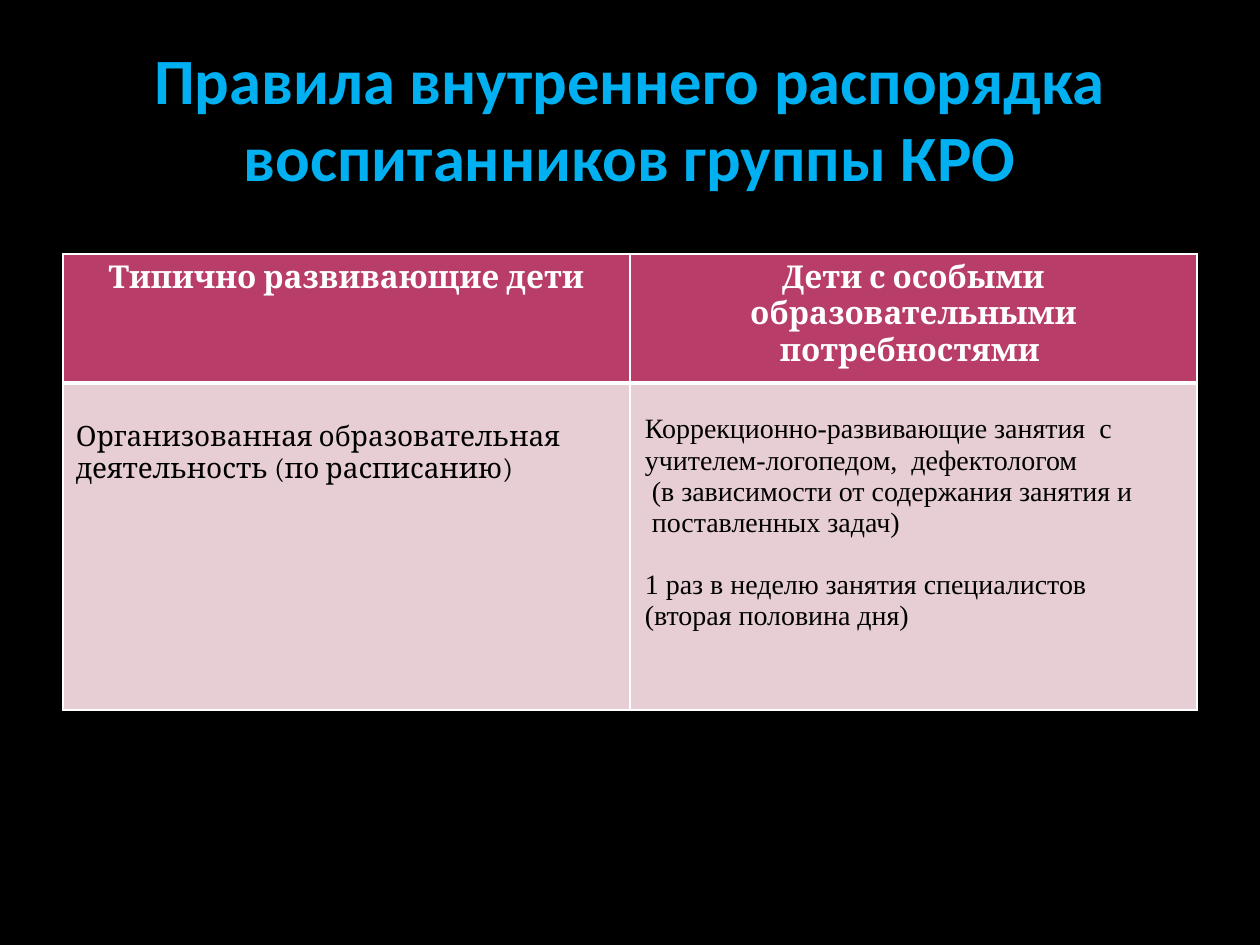
from lxml import etree
from pptx import Presentation
from pptx.dml.color import RGBColor
from pptx.enum import text
from pptx.oxml.ns import qn
from pptx.util import Emu, Pt

PX = 914400 // 126
BLACK = RGBColor(0, 0, 0)
WHITE = RGBColor(255, 255, 255)
BLUE = RGBColor(0, 0xB0, 0xF0)
ROSE = RGBColor(0xB8, 0x3D, 0x68)
PINK = RGBColor(0xE6, 0xCE, 0xD4)

TITLE = "Правила внутреннего распорядка воспитанников группы КРО"
HEADS = ["Типично развивающие дети",
         "Дети с особыми образовательными потребностями "]
LEFT = ["Организованная образовательная деятельность (по расписанию)"]
RIGHT = ["Коррекционно-развивающие занятия  с учителем-логопедом,  дефектологом",
         " (в зависимости от содержания занятия и",
         " поставленных задач)",
         "1 раз в неделю занятия специалистов",
         "(вторая половина дня)"]
GAP = {RIGHT[3]: 31}  # px above a paragraph

HEAD = {"name": "Cambria", "size": Pt(18), "bold": True}
BODY = {"name": "Cambria", "size": Pt(16), "bold": False}
TIMES = {**BODY, "name": "Times New Roman"}
MID = text.PP_ALIGN.CENTER
SIDE = text.PP_ALIGN.LEFT

# lines, font, colour, fill, alignment, margins in px (left, top, right, bottom)
GRID = [
    [([h], HEAD, WHITE, ROSE, MID, (13, 6, 13, 6)) for h in HEADS],
    [(LEFT, BODY, BLACK, PINK, SIDE, (13, 38, 13, 6)),
     (RIGHT, TIMES, BLACK, PINK, SIDE, (15, 31, 15, 0))],
]
COLS = [567, 567]
ROWS = [129, 327]


def px(n):
    return Emu(n * PX)


def place(shape, *box):
    for key, n in zip(("left", "top", "width", "height"), box):
        setattr(shape, key, px(n))


def style(par, font, color, align):
    par.alignment = align
    for key, val in font.items():
        setattr(par.font, key, val)
    par.font.color.rgb = color


def edge(cell, widths):
    """Draw white cell borders; widths are points by side tag."""
    props = cell._tc.get_or_add_tcPr()
    for i, (tag, pt) in enumerate(widths.items()):
        line = etree.Element(qn("a:" + tag), w=str(Pt(pt)))
        fill = etree.SubElement(line, qn("a:solidFill"))
        etree.SubElement(fill, qn("a:srgbClr"), val=str(WHITE))
        props.insert(i, line)


def fill_cell(cell, lines, font, color, fill, align, pads):
    cell.fill.solid()
    cell.fill.fore_color.rgb = fill
    for key, n in zip(("left", "top", "right", "bottom"), pads):
        setattr(cell, "margin_" + key, px(n))
    frame = cell.text_frame
    for i, line in enumerate(lines):
        par = frame.add_paragraph() if i else frame.paragraphs[0]
        par.text = line
        par.space_before = px(GAP.get(line, 0))
        style(par, font, color, align)


def main():
    deck = Presentation()
    deck.slide_width, deck.slide_height = px(1260), px(945)
    slide = deck.slides.add_slide(deck.slide_layouts[5])
    slide.background.fill.solid()
    slide.background.fill.fore_color.rgb = BLACK

    title = slide.shapes.title
    place(title, 63, 38, 1134, 158)
    title.text = TITLE
    frame = title.text_frame
    frame.auto_size = text.MSO_AUTO_SIZE.NONE
    frame.vertical_anchor = text.MSO_ANCHOR.MIDDLE
    style(frame.paragraphs[0],
          {"name": "Calibri", "size": Pt(36.9), "bold": True}, BLUE, MID)

    table = slide.shapes.add_table(
        len(ROWS), len(COLS), px(63), px(254), px(sum(COLS)), px(sum(ROWS))).table
    for col, n in zip(table.columns, COLS):
        col.width = px(n)
    for r, (row, n) in enumerate(zip(table.rows, ROWS)):
        row.height = px(n)
        for cell, data in zip(row.cells, GRID[r]):
            fill_cell(cell, *data)
            edge(cell, {"lnL": 1, "lnR": 1, "lnT": 1 if r == 0 else 3,
                        "lnB": 3 if r == 0 else 1})
    deck.save("out.pptx")


if __name__ == "__main__":
    main()
